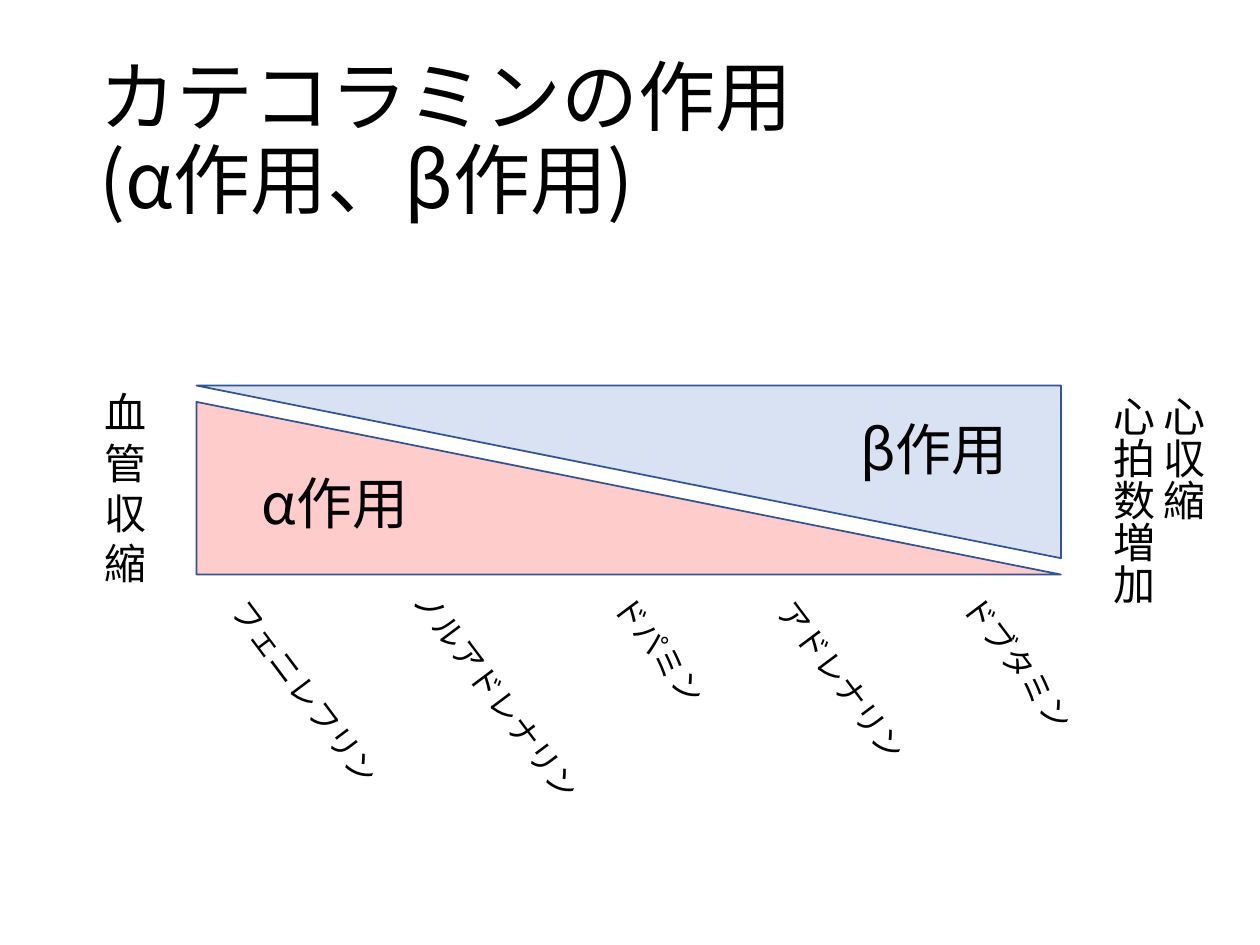
from lxml import etree
from pptx import Presentation, util as u
from pptx.dml.color import RGBColor
from pptx.enum import shapes, text
from pptx.oxml import ns

BLACK = RGBColor(0x00, 0x00, 0x00)
RED = RGBColor(0xFF, 0x00, 0x00)
BLUE = RGBColor(0x44, 0x72, 0xC4)
OUTLINE = RGBColor(0x32, 0x54, 0x91)
FONT = "Noto Sans CJK JP"

# Grid of 100 columns by 75 rows
CELL = u.Inches(0.1)
COLUMNS, ROWS = 100, 75

presentation = Presentation()
presentation.slide_width = COLUMNS * CELL
presentation.slide_height = ROWS * CELL
slide = presentation.slides.add_slide(presentation.slide_layouts[6])


def place(*cells):
    return [u.Emu(round(cell * CELL)) for cell in cells]


def add_label(lines, box, size, rotation=0, **frame_format):
    shape = slide.shapes.add_textbox(*place(*box))
    shape.rotation = rotation
    frame = shape.text_frame
    frame_format = {"word_wrap": True,
                    "auto_size": text.MSO_AUTO_SIZE.SHAPE_TO_FIT_TEXT} | frame_format
    for name, value in frame_format.items():
        setattr(frame, name, value)
    frame.text = lines
    for paragraph in frame.paragraphs:
        for run in paragraph.runs:
            for name, value in {"size": u.Pt(size), "name": FONT}.items():
                setattr(run.font, name, value)
            run.font.color.rgb = BLACK
            east_asian = etree.SubElement(run.font._element, ns.qn("a:ea"))
            east_asian.set("typeface", FONT)
    return shape


# Title
title = add_label("カテコラミンの作用\v(α作用、β作用)", (6.9, 4, 86.2, 14.5), 44,
                  auto_size=text.MSO_AUTO_SIZE.NONE,
                  vertical_anchor=text.MSO_ANCHOR.MIDDLE)
title.text_frame.paragraphs[0].line_spacing = 0.9

# Two opposing wedges: alpha below, beta above
for top, rotation, color in ((31.9, 0, RED), (30.6, 180, BLUE)):
    wedge = slide.shapes.add_shape(shapes.MSO_SHAPE.RIGHT_TRIANGLE,
                                   *place(15.6, top, 68.6, 13.7))
    wedge.rotation = rotation
    wedge.shadow.inherit = False
    wedge.fill.solid()
    wedge.fill.fore_color.rgb = color
    wedge.line.color.rgb = OUTLINE
    wedge.line.width = u.Pt(1)
    fill_color = wedge._element.spPr.find(ns.qn("a:solidFill"))[0]
    etree.SubElement(fill_color, ns.qn("a:alpha")).set("val", "20000")

# Wedge names
for name, left, top in (("α作用", 19.8, 36.7), ("β作用", 67.3, 32.4)):
    add_label(name, (left, top, 17.8, 6.4), 32)

# Slanted drug names, from alpha to beta
for drug, left, top, width in (
    ("フェニレフリン", 14.2, 53.6, 21.1),
    ("ノルアドレナリン", 28.2, 53.6, 23.2),
    ("ドパミン", 44.2, 54.1, 23.2),
    ("アドレナリン", 56.7, 55.3, 25.2),
    ("ドブタミン", 71.5, 54.9, 25.2),
):
    add_label(drug, (left, top, width, 4), 18, rotation=53.1)

# Effects at both ends
add_label("血管収縮", (7.3, 30.2, 3.8, 17.2), 24)
heart = add_label("心収縮\n心拍数増加", (86.3, 30.4, 10.1, 29.6), 24)
heart.text_frame._txBody.bodyPr.set("vert", "eaVert")

presentation.save("out.pptx")
